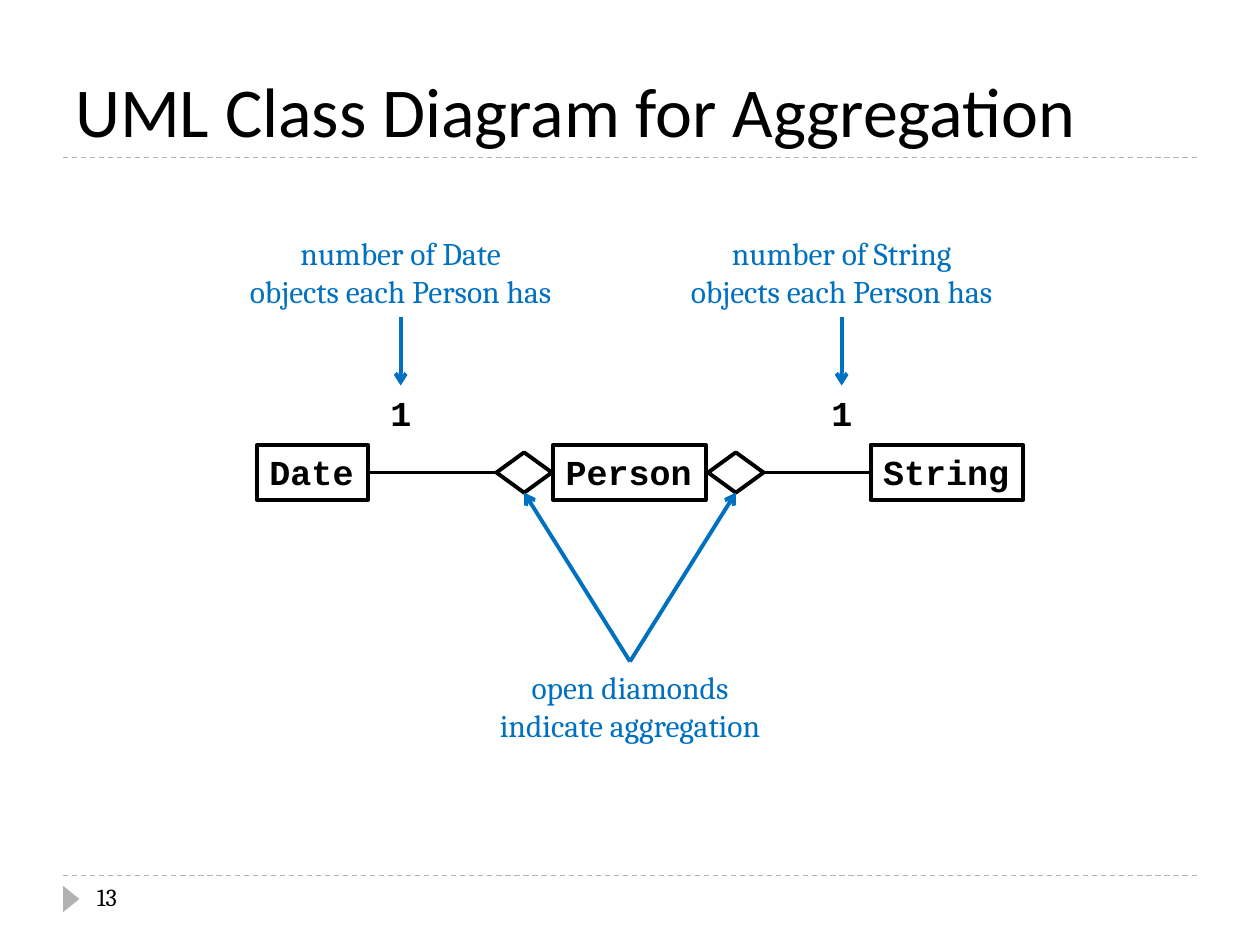
from pptx import Presentation
from pptx.dml.color import RGBColor
from pptx.enum.dml import MSO_LINE
from pptx.enum.shapes import MSO_CONNECTOR, MSO_SHAPE
from pptx.enum.text import MSO_ANCHOR, MSO_AUTO_SIZE, PP_ALIGN
from pptx.oxml.ns import qn
from pptx.util import Inches, Pt
from lxml.etree import SubElement

BLACK = RGBColor(0x00, 0x00, 0x00)
BLUE = RGBColor(0x00, 0x70, 0xC0)
GRAY = RGBColor(0xB2, 0xB2, 0xB2)

TOP, LEFT, BOTTOM, RIGHT = range(4)
CODE = dict(font="Courier New", size=20, bold=True, wrap=False)
NOTE = dict(font="Cambria", size=18, color=BLUE, align=PP_ALIGN.CENTER, wrap=False)


def write(shape, text, font, size, color=BLACK, bold=False, align=PP_ALIGN.LEFT,
          anchor=MSO_ANCHOR.TOP, wrap=True):
    """Fill a shape with one paragraph per line; an unwrapped shape fits its text."""
    frame = shape.text_frame
    frame.word_wrap = wrap
    frame.auto_size = MSO_AUTO_SIZE.NONE if wrap else MSO_AUTO_SIZE.SHAPE_TO_FIT_TEXT
    frame.vertical_anchor = anchor
    for index, line in enumerate(text.split("\n")):
        para = frame.add_paragraph() if index else frame.paragraphs[0]
        para.alignment = align
        span = para.add_run()
        span.text = line
        span.font.name = font
        span.font.size = Pt(size)
        span.font.bold = bold
        span.font.color.rgb = color


def add_text(page, box, text, **style):
    label = page.shapes.add_textbox(*map(Inches, box))
    write(label, text, **style)
    return label


def add_outline(page, kind, box):
    shape = page.shapes.add_shape(kind, *map(Inches, box))
    shape.shadow.inherit = False
    shape.fill.background()
    shape.line.color.rgb = BLACK
    shape.line.width = Pt(2.25)
    return shape


def add_line(page, start, end, color, width):
    line = page.shapes.add_connector(MSO_CONNECTOR.STRAIGHT, *map(Inches, (*start, *end)))
    line.line.color.rgb = color
    line.line.width = Pt(width)
    SubElement(line._element.spPr, qn("a:effectLst"))
    return line


def join(page, source, source_side, target, target_side, color=BLACK, arrow=False):
    line = add_line(page, (0, 0), (0, 0), color, 2.25)
    line.begin_connect(source, source_side)
    line.end_connect(target, target_side)
    if arrow:
        SubElement(line.line._get_or_add_ln(), qn("a:tailEnd"), type="arrow")


def add_rule(page, y):
    add_line(page, (0.5, y), (9.5, y), GRAY, 0.75).line.dash_style = MSO_LINE.DASH


def add_header(page, box):
    left, top, width, height = box
    add_rule(page, top + height)
    add_text(page, box, "UML Class Diagram for Aggregation", font="Calibri", size=40,
             anchor=MSO_ANCHOR.BOTTOM)


def add_footer(page, box):
    left, top, width, height = box
    add_rule(page, top)
    marker = page.shapes.add_shape(
        MSO_SHAPE.ISOSCELES_TRIANGLE, Inches(left - 0.04), Inches(top + 0.12),
        Inches(0.21), Inches(0.13))
    marker.rotation = 90
    marker.shadow.inherit = False
    marker.fill.solid()
    marker.fill.fore_color.rgb = GRAY
    marker.line.fill.background()
    add_text(page, (left + 0.17, top, 2.17, height), "13", font="Cambria", size=14)


def add_class(page, left, middle, width, name):
    shape = add_outline(page, MSO_SHAPE.RECTANGLE, (left, middle - 0.22, width, 0.44))
    write(shape, name, **CODE)
    return shape


def add_multiplicity(page, center, top, name):
    """Explain the number of parts with a note that points down at it."""
    note = add_text(page, (center - 1.38, top, 2.76, 0.71),
                    f"number of {name}\nobjects each Person has", **NOTE)
    count = add_text(page, (center - 0.18, top + 1.25, 0.36, 0.44), "1", **CODE)
    join(page, note, BOTTOM, count, TOP, BLUE, arrow=True)


def add_diagram(page, box):
    left, top, width, height = box
    middle = top + 1.94
    add_class(page, 4.39, middle, 1.21, "Person")
    note = add_text(page, (left + width / 2 - 1.21, top + height - 0.71, 2.42, 0.71),
                    "open diamonds\nindicate aggregation", **NOTE)
    parts = [
        ("Date", 2.04, 0.88, 3.94, 3.18, LEFT, RIGHT),
        ("String", 6.91, 1.21, 5.62, 6.68, RIGHT, LEFT),
    ]
    for name, part_left, part_width, diamond_left, center, outer, inner in parts:
        part = add_class(page, part_left, middle, part_width, name)
        diamond = add_outline(page, MSO_SHAPE.DIAMOND,
                              (diamond_left, middle - 0.16, 0.44, 0.32))
        join(page, diamond, outer, part, inner)
        add_multiplicity(page, center, top, name)
        join(page, note, TOP, diamond, BOTTOM, BLUE, arrow=True)


def main():
    deck = Presentation()
    deck.slide_width, deck.slide_height = Inches(10), Inches(7.5)
    page = deck.slides.add_slide(deck.slide_layouts[6])
    add_header(page, (0.5, 0.25, 9, 1))
    add_diagram(page, (0.5, 1.81, 9, 4.15))
    add_footer(page, (0.5, 6.95, 9, 0.4))
    deck.save("out.pptx")


if __name__ == "__main__":
    main()
